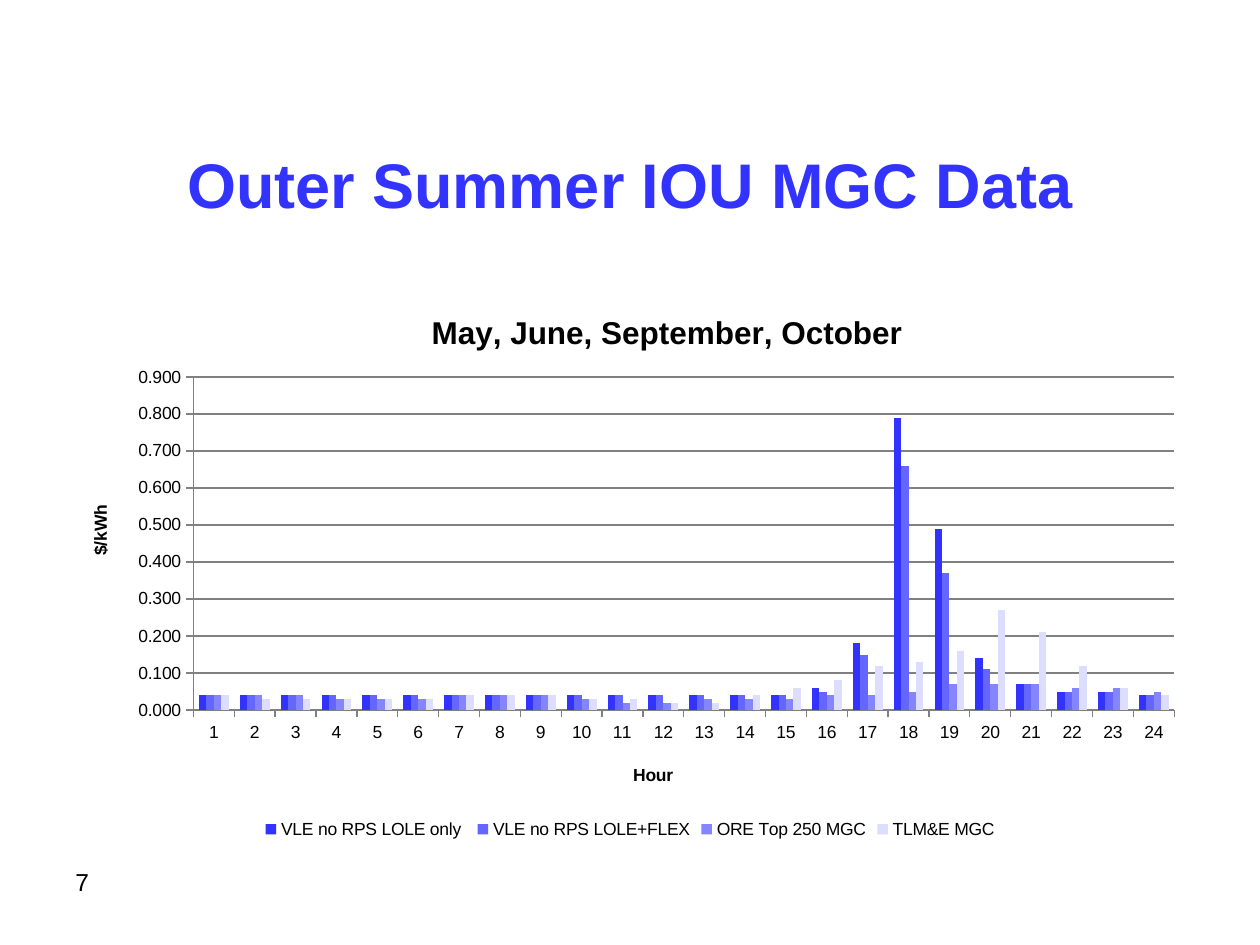
from pptx import Presentation
from pptx import util as u
from pptx.chart.data import CategoryChartData
from pptx.dml.color import RGBColor
from pptx.enum import chart as ch, text
from pptx.oxml import parse_xml
from pptx.oxml.ns import nsdecls, qn

FONT = "Arial"
BLUE = RGBColor(0x33, 0x33, 0xFF)
BLACK = RGBColor(0, 0, 0)
GREY = RGBColor(0x80, 0x80, 0x80)

# Name, colour and hourly $/kWh of each series
SERIES = [
    ("VLE no RPS LOLE only ", BLUE,
     [0.04] * 15 + [0.06, 0.18, 0.79, 0.49, 0.14, 0.07, 0.05, 0.05, 0.04]),
    ("VLE no RPS LOLE+FLEX", RGBColor(0x65, 0x65, 0xFF),
     [0.04] * 15 + [0.05, 0.15, 0.66, 0.37, 0.11, 0.07, 0.05, 0.05, 0.04]),
    ("ORE Top 250 MGC", RGBColor(0x85, 0x85, 0xFF),
     [0.04, 0.04, 0.04, 0.03, 0.03, 0.03, 0.04, 0.04, 0.04, 0.03, 0.02, 0.02,
      0.03, 0.03, 0.03, 0.04, 0.04, 0.05, 0.07, 0.07, 0.07, 0.06, 0.06, 0.05]),
    ("TLM&E MGC", RGBColor(0xDD, 0xDD, 0xFF),
     [0.04, 0.03, 0.03, 0.03, 0.03, 0.03, 0.04, 0.04, 0.04, 0.03, 0.03, 0.02,
      0.02, 0.04, 0.06, 0.08, 0.12, 0.13, 0.16, 0.27, 0.21, 0.12, 0.06, 0.04]),
]


def set_font(font, size, color=BLACK, bold=False):
    fmt = {"name": FONT, "size": u.Pt(size), "bold": bold}
    for key, value in fmt.items():
        setattr(font, key, value)
    font.color.rgb = color


def write(tf, words, align, anchor, size, color=BLACK, bold=False):
    tf.word_wrap = True
    tf.vertical_anchor = anchor
    p = tf.paragraphs[0]
    p.alignment = align
    r = p.add_run()
    r.text = words
    set_font(r.font, size, color, bold)


def place(parent, index, **fractions):
    """Give a chart part a manual layout, in fractions of the chart."""
    for old in parent.findall(qn("c:layout")):
        parent.remove(old)
    modes = {"xMode": "edge", "yMode": "edge"}
    if "w" in fractions:
        modes = {"layoutTarget": "inner", **modes}
    items = "".join(f'<c:{k} val="{v}"/>' for k, v in {**modes, **fractions}.items())
    parent.insert(index, parse_xml(
        f'<c:layout {nsdecls("c")}><c:manualLayout>{items}</c:manualLayout></c:layout>'))


def add_heading(owner, words, size, x, y):
    """Title a chart or an axis."""
    owner.has_title = True
    title = owner.chart_title if hasattr(owner, "chart_title") else owner.axis_title
    r = title.text_frame.paragraphs[0].add_run()
    r.text = words
    set_font(r.font, size, bold=True)
    place(title._element, 1, x=x, y=y)
    return title


def style_axis(axis):
    axis.major_tick_mark = ch.XL_TICK_MARK.OUTSIDE
    axis.minor_tick_mark = ch.XL_TICK_MARK.NONE
    axis.format.line.color.rgb = GREY
    set_font(axis.tick_labels.font, 10)


def add_column_chart(s, left, top, width, height):
    data = CategoryChartData(number_format="0.000")
    data.categories = [str(hour) for hour in range(1, 25)]
    for name, _, values in SERIES:
        data.add_series(name, values)
    chart = s.shapes.add_chart(
        ch.XL_CHART_TYPE.COLUMN_CLUSTERED, u.Pt(left), u.Pt(top),
        u.Pt(width), u.Pt(height), data).chart
    set_font(chart.font, 10)

    # Columns
    plot = chart.plots[0]
    plot.gap_width = 150
    plot.vary_by_categories = False
    for series, (_, color, _) in zip(plot.series, SERIES):
        series.format.fill.solid()
        series.format.fill.fore_color.rgb = color
    place(chart._chartSpace.chart.plotArea, 0, x=0.115, y=0.167, w=0.865, h=0.594)

    # Axes
    hours, price = chart.category_axis, chart.value_axis
    for axis in (hours, price):
        style_axis(axis)
    price.minimum_scale, price.maximum_scale, price.major_unit = 0, 0.9, 0.1
    price.tick_labels.number_format = "0.000"
    price.tick_labels.number_format_is_linked = False
    price.has_major_gridlines = True
    price.major_gridlines.format.line.color.rgb = GREY

    # Headings and legend
    add_heading(chart, "May, June, September, October", 18, 0.32, 0.04)
    add_heading(hours, "Hour", 10, 0.5, 0.85)
    unit = add_heading(price, "$/kWh", 10, 0.02, 0.39)
    unit.text_frame._txBody.bodyPr.set("rot", "-5400000")
    chart.has_legend = True
    chart.legend.position = ch.XL_LEGEND_POSITION.BOTTOM
    chart.legend.include_in_layout = False
    set_font(chart.legend.font, 10)


def main():
    prs = Presentation()
    prs.slide_width, prs.slide_height = u.Pt(720), u.Pt(540)
    s = prs.slides.add_slide(prs.slide_layouts[5])

    # Title
    title = s.shapes.title
    box = {"left": 36, "top": 66, "width": 648, "height": 78}
    for key, value in box.items():
        setattr(title, key, u.Pt(value))
    write(title.text_frame, "Outer Summer IOU MGC Data", text.PP_ALIGN.CENTER,
          text.MSO_ANCHOR.MIDDLE, 36, BLUE, True)

    # Chart
    add_column_chart(s, 36, 162, 648, 320.4)

    # Page number
    number = s.shapes.add_textbox(u.Pt(36), u.Pt(492), u.Pt(132), u.Pt(37.5))
    write(number.text_frame, "7", text.PP_ALIGN.LEFT, text.MSO_ANCHOR.TOP, 14)

    prs.save("out.pptx")


if __name__ == "__main__":
    main()
